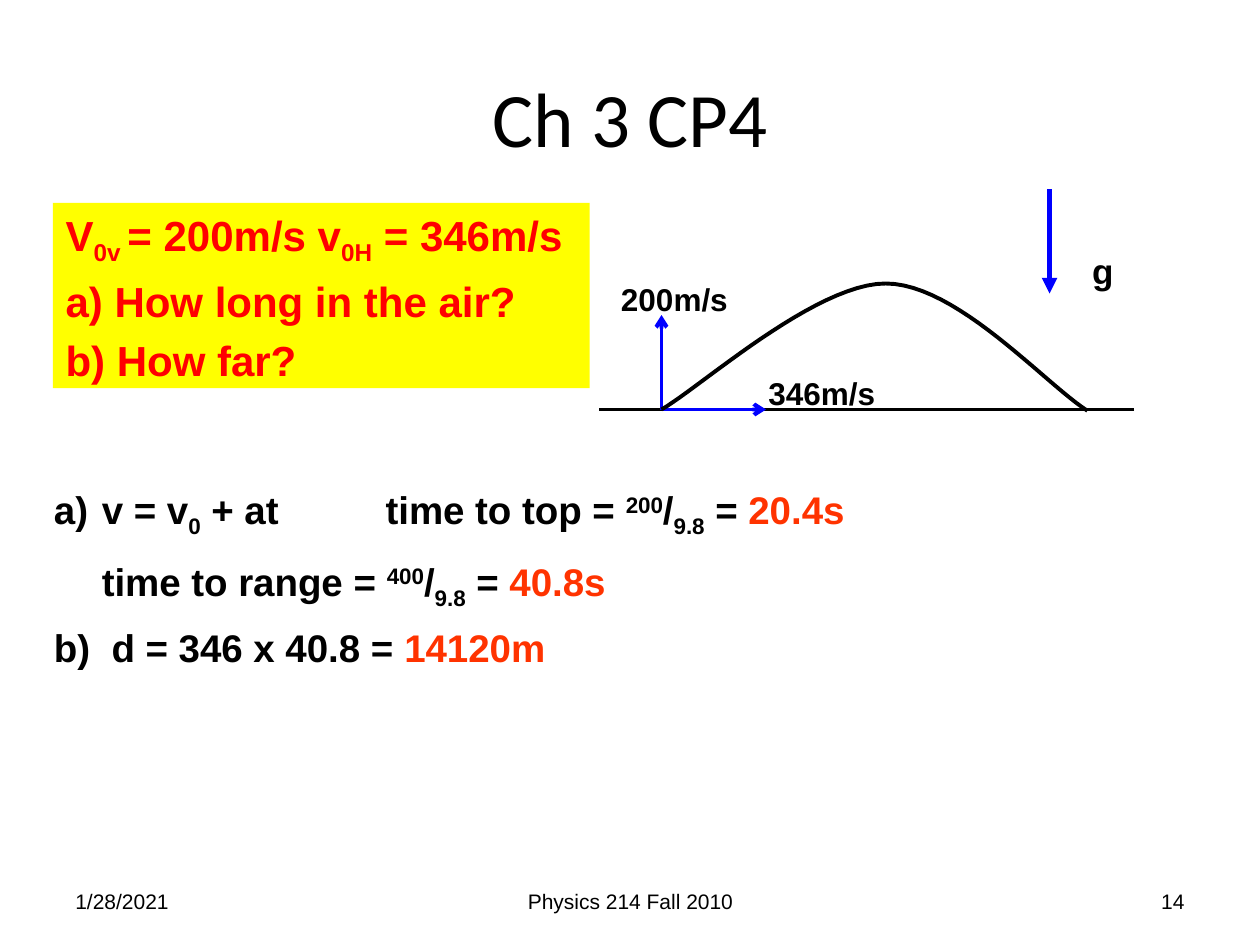
from dataclasses import dataclass
from typing import NamedTuple

from lxml.etree import SubElement
from pptx import Presentation
from pptx.dml.color import RGBColor
from pptx.enum.shapes import MSO_CONNECTOR
from pptx.enum.text import MSO_ANCHOR, MSO_AUTO_SIZE, PP_ALIGN
from pptx.oxml.ns import qn
from pptx.util import Inches, Pt

BLACK = RGBColor(0x00, 0x00, 0x00)
BLUE = RGBColor(0x00, 0x00, 0xFF)
RED = RGBColor(0xFF, 0x00, 0x00)
ORANGE = RGBColor(0xFF, 0x33, 0x00)
YELLOW = RGBColor(0xFF, 0xFF, 0x00)
SUB, SUPER = -25000, 30000
LAUNCH = (5.25, 3.25)


class Span(NamedTuple):
    text: str
    baseline: int = 0
    color: RGBColor | None = None
    spacing: float = 0  # extra points after each character


class Arrow(NamedTuple):
    start: tuple[float, float]
    end: tuple[float, float]
    color: RGBColor = BLUE
    width: float = 2.25
    head: str | None = "arrow"


@dataclass
class Label:
    place: tuple[float, float, float, float]
    lines: list[list[Span]]
    size: float
    bold: bool = True
    color: RGBColor = BLACK
    align: PP_ALIGN = PP_ALIGN.LEFT
    anchor: MSO_ANCHOR = MSO_ANCHOR.TOP
    gap: float = 0
    margin: float = 0
    numbered: bool = False  # letter the first line, align the others with it


def fill_box(box, label: Label) -> None:
    box.left, box.top, box.width, box.height = map(Inches, label.place)
    frame = box.text_frame
    frame.word_wrap = True
    frame.auto_size = MSO_AUTO_SIZE.NONE
    frame.vertical_anchor = label.anchor
    for index, spans in enumerate(label.lines):
        para = frame.add_paragraph() if index else frame.paragraphs[0]
        para.alignment = label.align
        para.space_before = Pt(label.gap if index else 0)
        lettered = label.numbered and index == 0
        props = para._p.get_or_add_pPr()
        props.set("marL", str(Inches(label.margin)))
        props.set("indent", str(-Inches(label.margin) if lettered else 0))
        if lettered:
            SubElement(props, qn("a:buAutoNum"), type="alphaLcParenR")
        else:
            SubElement(props, qn("a:buNone"))
        font = para.font
        font.name, font.size, font.bold = "Arial", Pt(label.size), label.bold
        font.color.rgb = label.color
        for span in spans:
            run = para.add_run()
            run.text = span.text
            if span.color is not None:
                run.font.color.rgb = span.color
            if span.baseline:
                run.font._element.set("baseline", str(span.baseline))
            if span.spacing:
                run.font._element.set("spc", str(round(span.spacing * 100)))


def add_label(page, label: Label) -> None:
    fill_box(page.shapes.add_textbox(0, 0, 0, 0), label)


def add_arrow(page, arrow: Arrow) -> None:
    line = page.shapes.add_connector(
        MSO_CONNECTOR.STRAIGHT, *map(Inches, arrow.start + arrow.end))
    line.line.color.rgb = arrow.color
    line.line.width = Pt(arrow.width)
    if arrow.head:
        SubElement(line.line._get_or_add_ln(), qn("a:tailEnd"), type=arrow.head)
    SubElement(line._element.spPr, qn("a:effectLst"))


def bezier(points: list[tuple[float, float]], steps: int = 24) -> list[tuple[int, int]]:
    """Points in EMU along a cubic curve, without its first point."""
    weights = (1, 3, 3, 1)
    return [
        tuple(Inches(sum(w * (1 - t) ** (3 - i) * t ** i * point[axis]
                         for i, (w, point) in enumerate(zip(weights, points))))
              for axis in (0, 1))
        for t in (step / steps for step in range(1, steps + 1))
    ]


def add_trajectory(page) -> None:
    top, landing = (7.03, 2.25), (8.63, 3.26)
    rise = bezier([LAUNCH, (5.55, 3.08), (6.47, 2.25), top])
    fall = bezier([top, (7.59, 2.25), (8.3, 3.05), landing])
    builder = page.shapes.build_freeform(*map(Inches, LAUNCH))
    builder.add_line_segments(rise + fall, close=False)
    curve = builder.convert_to_shape()
    curve.shadow.inherit = False
    curve.fill.background()
    curve.line.color.rgb = BLACK
    curve.line.width = Pt(2.25)


QUESTIONS = Label((0.42, 1.61, 4.26, 1.47), [
    [Span("V"), Span("0v ", SUB), Span("= 200m/s v"), Span("0H", SUB), Span(" = 346m/s")],
    [Span("a) How long in the air?")],
    [Span("b) How far?")],
], 24, color=RED, gap=5)

LABELS = [
    # Solution
    Label((0.33, 3.81, 7.67, 1.02), [
        [Span("v = v"), Span("0", SUB), Span(" + at"), Span(" ", spacing=55),
         Span("time to top = "), Span("200", SUPER), Span("/"), Span("9.8", SUB),
         Span(" = "), Span("20.4s", color=ORANGE)],
        [Span("time to range = "), Span("400", SUPER), Span("/"),
         Span("9.8", SUB), Span(" = "), Span("40.8s", color=ORANGE)],
    ], 22, gap=11, margin=0.38, numbered=True),
    Label((0.33, 4.9, 5.25, 0.47),
          [[Span("b)  d = 346 x 40.8 = "), Span("14120m", color=ORANGE)]], 22),
    # Diagram labels
    Label((4.83, 2.17, 1.08, 0.4), [[Span("200m/s")]], 18),
    Label((6, 2.92, 1.08, 0.4), [[Span("346m/s")]], 18),
    Label((8.57, 1.93, 0.37, 0.43), [[Span("g")]], 20),
]

FOOTERS = [
    (0.5, 2.33, "1/28/2021", PP_ALIGN.LEFT),
    (3.42, 3.17, "Physics 214 Fall 2010", PP_ALIGN.CENTER),
    (7.17, 2.33, "14", PP_ALIGN.RIGHT),
]

ARROWS = [
    Arrow((9, 3.25), (4.75, 3.25), BLACK, head=None),  # ground
    Arrow(LAUNCH, (5.25, 2.5)),  # vertical velocity
    Arrow(LAUNCH, (6.08, 3.25)),  # horizontal velocity
    Arrow((8.33, 1.5), (8.33, 2.33), width=3, head="triangle"),  # gravity
]


def main() -> None:
    deck = Presentation()
    deck.slide_width, deck.slide_height = Inches(10), Inches(7.5)
    page = deck.slides.add_slide(deck.slide_layouts[1])

    # Title and questions
    title = page.shapes.title
    title.text = "Ch 3 CP4"
    font = title.text_frame.paragraphs[0].font
    font.name, font.size, font.color.rgb = "Calibri", Pt(44), BLACK
    questions = page.placeholders[1]
    fill_box(questions, QUESTIONS)
    questions.fill.solid()
    questions.fill.fore_color.rgb = YELLOW

    # Diagram
    for arrow in ARROWS:
        add_arrow(page, arrow)
    add_trajectory(page)

    # Solution, diagram labels and footer
    for label in LABELS:
        add_label(page, label)
    for left, width, text, align in FOOTERS:
        add_label(page, Label((left, 6.95, width, 0.4), [[Span(text)]], 12, bold=False,
                              align=align, anchor=MSO_ANCHOR.MIDDLE))

    deck.save("out.pptx")


if __name__ == "__main__":
    main()
